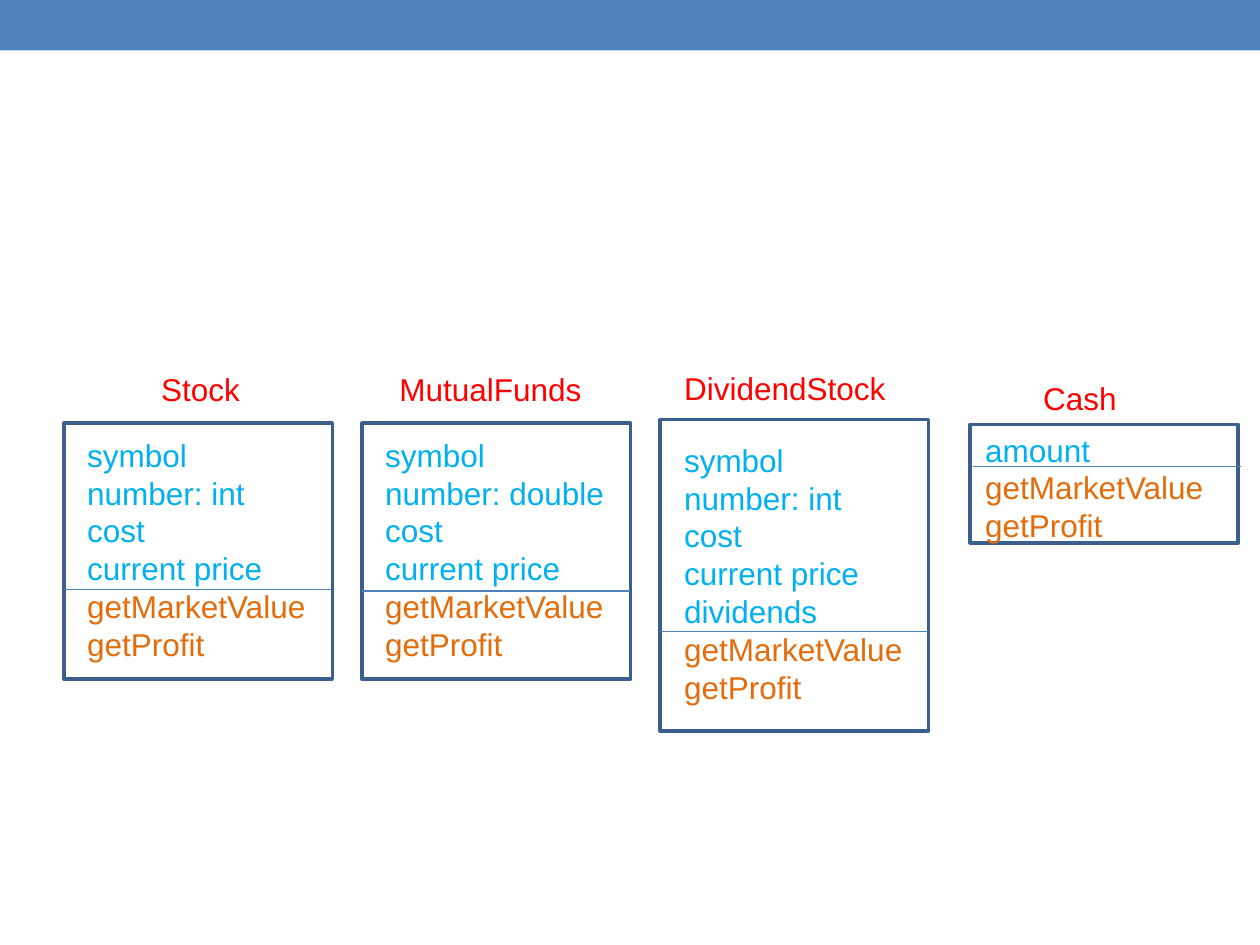
import dataclasses

import pptx
import pptx.dml.color
import pptx.enum.shapes
import pptx.enum.text
import pptx.oxml.ns
import pptx.util
from lxml import etree

Pt = pptx.util.Pt


@dataclasses.dataclass(frozen=True)
class Theme:
    """Colours, type and line sizes of the slide."""
    font: str = "Arial"
    size: float = 18
    band: str = "4F81BD"
    frame: str = "3A5F8C"
    name: str = "FF0000"
    field: str = "00B0F0"
    method: str = "E46C0A"
    frame_width: float = 2.08
    rule_width: float = 0.75


@dataclasses.dataclass(frozen=True)
class ClassCard:
    """Content of a class, and offsets of its parts from its frame."""
    name: str
    fields: tuple
    box: tuple
    name_at: tuple
    name_width: float
    text_at: tuple
    rule_at: tuple


THEME = Theme()
METHODS = ("getMarketValue", "getProfit")
LEFT, PITCH, CARD_WIDTH = 36.7, 170.3, 153.2
NAME_HEIGHT, TEXT_WIDTH, LINE_HEIGHT, INSETS = 28.8, 140.4, 21.8, 7.4

CARDS = (
    ClassCard("Stock", ("symbol", "number: int", "cost", "current price"),
              (LEFT, 241.9, CARD_WIDTH, 146.2), (48.3, -33.8), 59.8, (6, 3.6), (0, 95)),
    ClassCard("MutualFunds", ("symbol", "number: double", "cost", "current price"),
              (LEFT + PITCH, 241.9, CARD_WIDTH, 146.2), (14.2, -33.8), 119.5, (6, 3.6), (0, 95.8)),
    ClassCard("DividendStock", ("symbol", "number: int", "cost", "current price", "dividends"),
              (LEFT + 2 * PITCH, 239.8, CARD_WIDTH, 177.8), (6.5, -32.4), 130.3, (6.5, 8.6), (0, 120.9)),
    ClassCard("Cash", ("amount",),
              (554.4, 242.6, CARD_WIDTH, 67.7), (34.6, -29.5), 56.9, (1.4, 0), (1.4, 23.8)),
)


def colour(value):
    """Turn a hex string into a colour."""
    return pptx.dml.color.RGBColor.from_string(value)


def write(para, text, *, color, size=THEME.size, font=THEME.font):
    """Write formatted text into a paragraph."""
    span = para.add_run()
    span.text = text
    span.font.name = font
    span.font.size = Pt(size)
    span.font.color.rgb = colour(color)


def add_lines(page, box, lines):
    """Place a text box holding one paragraph for each text and colour."""
    frame = page.shapes.add_textbox(*map(Pt, box)).text_frame
    frame.word_wrap = False
    frame.auto_size = pptx.enum.text.MSO_AUTO_SIZE.SHAPE_TO_FIT_TEXT
    for index, (text, color) in enumerate(lines):
        para = frame.add_paragraph() if index else frame.paragraphs[0]
        write(para, text, color=color)


def add_rectangle(page, box, fill=None, line=None):
    """Place a rectangle with an optional fill and outline."""
    shape = page.shapes.add_shape(pptx.enum.shapes.MSO_SHAPE.RECTANGLE, *map(Pt, box))
    shape.shadow.inherit = False
    if fill:
        shape.fill.solid()
        shape.fill.fore_color.rgb = colour(fill)
    else:
        shape.fill.background()
    if line:
        shape.line.color.rgb = colour(line)
        shape.line.width = Pt(THEME.frame_width)
    else:
        shape.line.fill.background()


def add_rule(page, left, top, width):
    """Place a thin horizontal divider."""
    rule = page.shapes.add_connector(
        pptx.enum.shapes.MSO_CONNECTOR.STRAIGHT, Pt(left), Pt(top), Pt(left + width), Pt(top))
    rule.line.color.rgb = colour(THEME.band)
    rule.line.width = Pt(THEME.rule_width)
    etree.SubElement(rule._element.spPr, pptx.oxml.ns.qn("a:effectLst"))


def add_card(page, card, box):
    """Place a class diagram card in its box."""
    left, top, width, height = box

    def place(offset):
        """Shift an offset by the corner of the box."""
        return left + offset[0], top + offset[1]

    members = [(text, THEME.field) for text in card.fields]
    members += [(text, THEME.method) for text in METHODS]
    text_height = LINE_HEIGHT * len(members) + INSETS
    add_rectangle(page, box, line=THEME.frame)
    add_lines(page, (*place(card.text_at), TEXT_WIDTH, text_height), members)
    add_rule(page, *place(card.rule_at), width)
    add_lines(page, (*place(card.name_at), card.name_width, NAME_HEIGHT), [(card.name, THEME.name)])


def main():
    """Build and save the deck."""
    deck = pptx.Presentation()
    deck.slide_width, deck.slide_height = Pt(720), Pt(540)
    page = deck.slides.add_slide(deck.slide_layouts.get_by_name("Blank"))
    add_rectangle(page, (0, 0, 720, 28.8), fill=THEME.band)
    for card in CARDS:
        add_card(page, card, card.box)
    deck.save("out.pptx")


if __name__ == "__main__":
    main()
